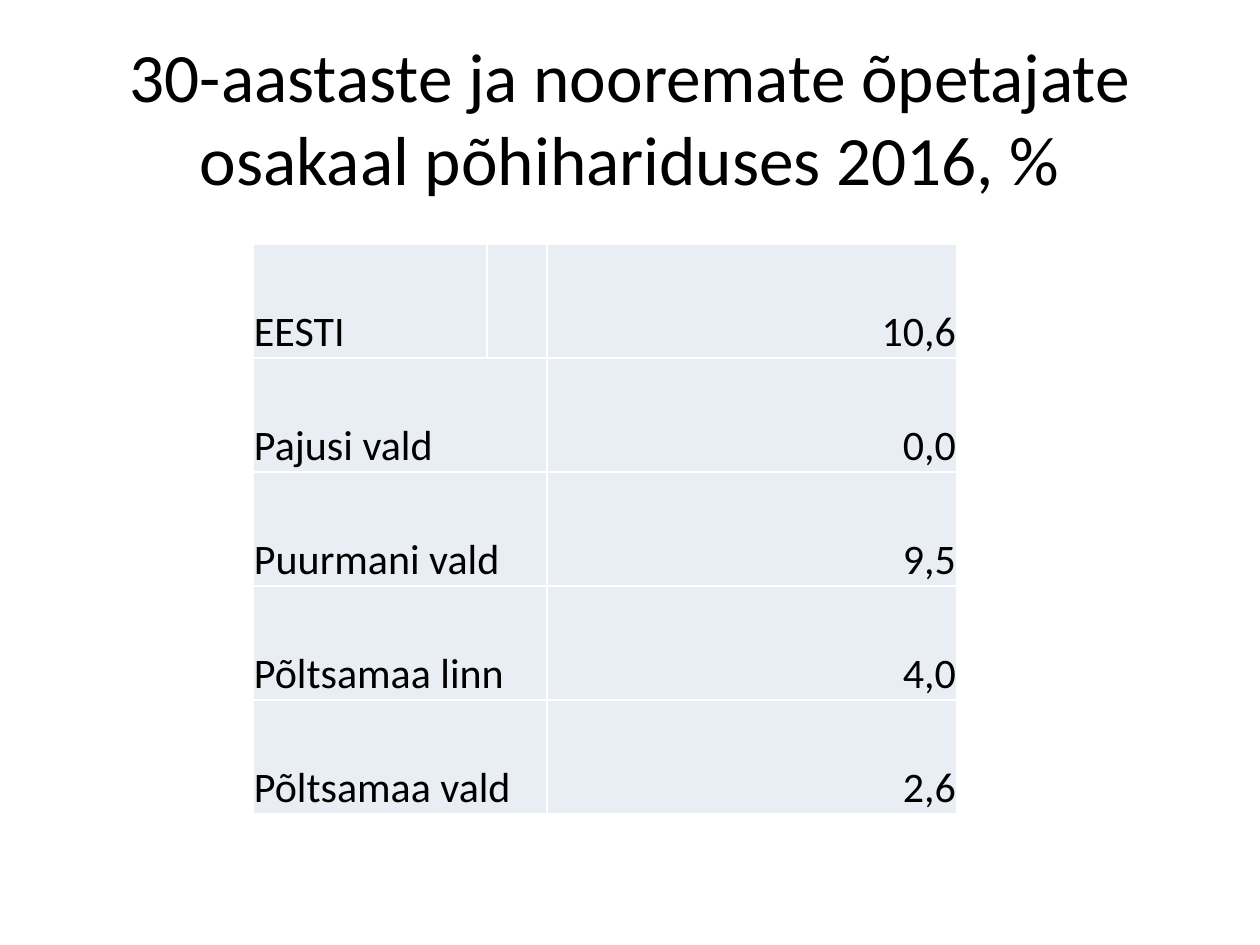
from dataclasses import dataclass

from lxml import etree
from pptx import Presentation
from pptx import util as u
from pptx.dml.color import RGBColor
from pptx.enum import text
from pptx.oxml.ns import qn

EMU_PER_PX = 914400 / 126


@dataclass(frozen=True)
class Theme:
    font: str = "Calibri"
    ink: str = "000000"
    cell_fill: str = "E9EDF4"
    border: str = "FFFFFF"
    title_size: float = 39.6
    cell_size: float = 24
    border_width: float = 1


THEME = Theme()
HEADING = "30-aastaste ja nooremate õpetajate osakaal põhihariduses 2016, %"
SHARES = [
    ("EESTI", "10,6"),
    ("Pajusi vald", "0,0"),
    ("Puurmani vald", "9,5"),
    ("Põltsamaa linn", "4,0"),
    ("Põltsamaa vald", "2,6"),
]
COLUMN_WIDTHS = [234, 60, 410]
ROW_HEIGHT = 114


def px(length):
    return u.Emu(round(length * EMU_PER_PX))


def add_run(paragraph, wording, size, align):
    paragraph.alignment = align
    run = paragraph.add_run()
    run.text = wording
    run.font.name = THEME.font
    run.font.size = u.Pt(size)
    run.font.color.rgb = RGBColor.from_string(THEME.ink)


def set_borders(cell):
    properties = cell._tc.get_or_add_tcPr()
    for position, side in enumerate(("lnL", "lnR", "lnT", "lnB")):
        line = etree.Element(qn(f"a:{side}"), w=str(u.Pt(THEME.border_width)))
        fill = etree.SubElement(line, qn("a:solidFill"))
        etree.SubElement(fill, qn("a:srgbClr"), val=THEME.border)
        properties.insert(position, line)


def format_cell(cell):
    cell.fill.solid()
    cell.fill.fore_color.rgb = RGBColor.from_string(THEME.cell_fill)
    cell.vertical_anchor = text.MSO_ANCHOR.BOTTOM
    cell.margin_left = cell.margin_right = cell.margin_top = px(1)
    cell.margin_bottom = 0
    set_borders(cell)


def fill_title(slide):
    heading = slide.shapes.title
    heading.left, heading.top = px(63), px(38)
    heading.width, heading.height = px(1134), px(157)
    heading.text_frame.word_wrap = True
    heading.text_frame.vertical_anchor = text.MSO_ANCHOR.MIDDLE
    add_run(heading.text_frame.paragraphs[0], HEADING,
            THEME.title_size, text.PP_ALIGN.CENTER)


def add_share_table(slide):
    shares = slide.shapes.add_table(
        len(SHARES), len(COLUMN_WIDTHS), px(253), px(244),
        px(sum(COLUMN_WIDTHS)), px(ROW_HEIGHT * len(SHARES))).table
    shares.first_row = shares.horz_banding = False
    for column, width in zip(shares.columns, COLUMN_WIDTHS):
        column.width = px(width)

    for index, (region, share) in enumerate(SHARES):
        shares.rows[index].height = px(ROW_HEIGHT)
        for cell in shares.rows[index].cells:
            format_cell(cell)
        # Only the national row keeps its narrow middle cell
        if index > 0:
            shares.cell(index, 0).merge(shares.cell(index, 1))
        add_run(shares.cell(index, 0).text_frame.paragraphs[0], region,
                THEME.cell_size, text.PP_ALIGN.LEFT)
        add_run(shares.cell(index, 2).text_frame.paragraphs[0], share,
                THEME.cell_size, text.PP_ALIGN.RIGHT)


def main():
    deck = Presentation()
    deck.slide_width, deck.slide_height = px(1260), px(945)
    # "Title Only" layout
    slide = deck.slides.add_slide(deck.slide_layouts[5])
    fill_title(slide)
    add_share_table(slide)
    deck.save("out.pptx")


if __name__ == "__main__":
    main()
